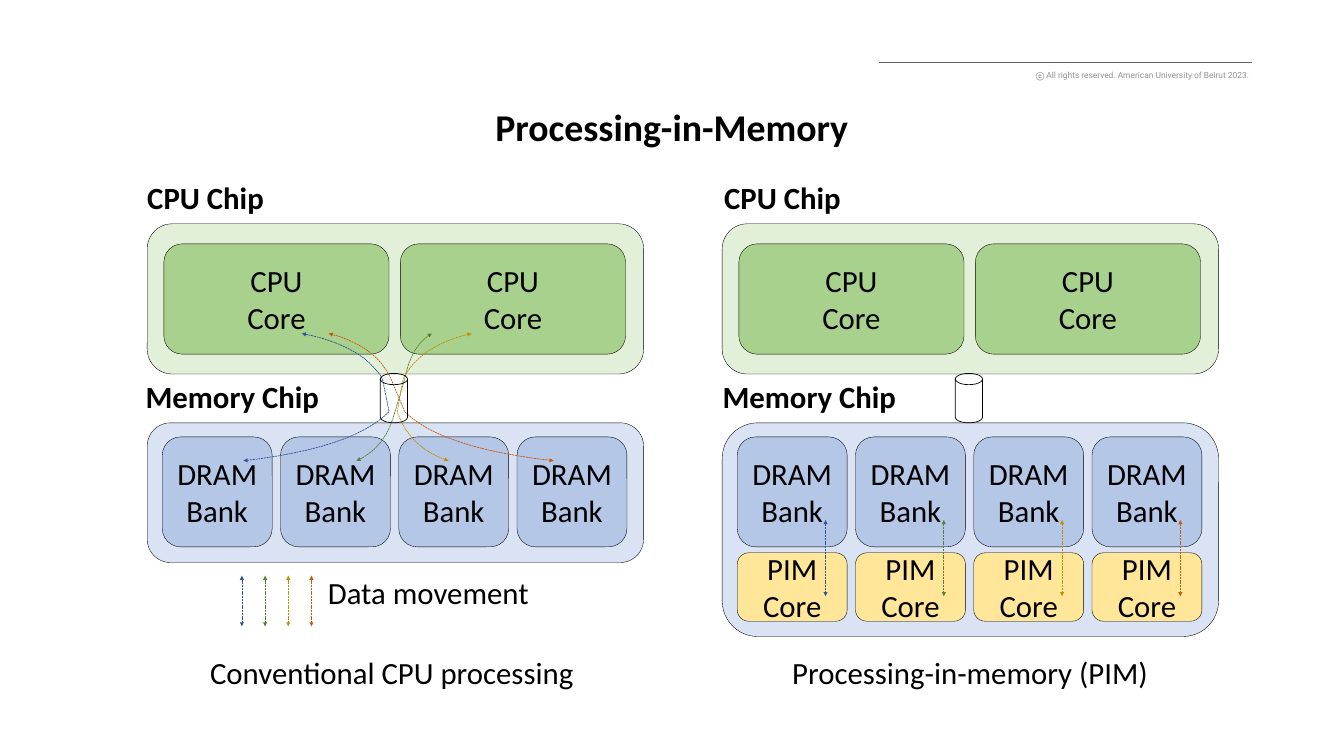
from lxml.etree import SubElement
from pptx import Presentation
from pptx.dml.color import RGBColor
from pptx.enum.dml import MSO_LINE
from pptx.enum.shapes import MSO_CONNECTOR, MSO_SHAPE
from pptx.enum.text import MSO_ANCHOR as Anchor, MSO_AUTO_SIZE as AutoSize, PP_ALIGN as Align
from pptx.oxml.ns import qn
from pptx.util import Cm, Pt

BLACK, GRAY = "000000", "929292"
BODY = {"name": "Calibri", "size": Pt(44), "bold": False}
HEADING = BODY | {"bold": True}
TITLE = HEADING | {"size": Pt(54)}
SMALL = {"name": "Roboto", "size": Pt(12), "bold": False}
SIDES = ("margin_left", "margin_top", "margin_right", "margin_bottom")

CONVENTIONAL_LEFT, PIM_LEFT = 7.42, 36.4
CHIP_WIDTH, CPU_TOP, CPU_HEIGHT = 25.02, 11.28, 7.57
CORE_INSET, CORE_STEP, CORE_WIDTH = 0.84, 11.92, 11.35
BANK_INSET, BANK_STEP, BANK_SIZE = 0.76, 5.96, 5.54
MEMORY_TOP, BANK_TOP = 21.31, 22.02
BUS_INSET, BUS_TOP, BUS_WIDTH = 11.75, 18.82, 1.37

FLOW_COLORS = ["2F5597", "548235", "BF9000", "C55A11"]
FLOW_BANK_Y, FLOW_BUS_LOW_Y, FLOW_BUS_HIGH_Y, FLOW_CORE_Y = 23.22, 20.75, 19.1, 16.81
FLOW_BANK_X = [12.27, 17.96, 22.61, 27.91]
FLOW_BUS_LOW_X = [19.61, 19.91, 20.02, 20.4]
FLOW_BUS_HIGH_X = [19.28, 20.4, 20.32, 19.71]
FLOW_CORE_X = [15.21, 21.77, 23.77, 16.56]
CURVE_STEPS = 12


def rgb(value):
    """Turn a hex string into a colour."""
    return RGBColor.from_string(value)


def set_all(target, values):
    """Set attributes from a dict of format values."""
    for name, value in values.items():
        setattr(target, name, value)


def add_run(paragraph, text, values, color=BLACK):
    """Add formatted text to a paragraph."""
    run = paragraph.add_run()
    run.text = text
    run.font.color.rgb = rgb(color)
    set_all(run.font, values)


def write(frame, lines, values):
    """Write one centred paragraph per line in a text frame."""
    for index, line in enumerate(lines):
        paragraph = frame.add_paragraph() if index else frame.paragraphs[0]
        paragraph.alignment = Align.CENTER
        add_run(paragraph, line, values)


def add_frame(slide, left, top, width, height):
    """Add an unwrapped text box that fits its text and return its frame."""
    frame = slide.shapes.add_textbox(Cm(left), Cm(top), Cm(width), Cm(height)).text_frame
    set_all(frame, {"word_wrap": False, "auto_size": AutoSize.SHAPE_TO_FIT_TEXT})
    return frame


def add_label(slide, left, top, width, text, values=BODY):
    """Add a centred line of text."""
    write(add_frame(slide, left, top, width, 2.13), [text], values)


def set_outline(shape, color, weight):
    """Set the colour and width of an outline."""
    shape.line.color.rgb = rgb(color)
    shape.line.width = Pt(weight)


def add_box(slide, left, top, width, height, fill=None, lines=(),
            kind=MSO_SHAPE.ROUNDED_RECTANGLE, weight=0.5):
    """Add an outlined shape with optional fill and text."""
    shape = slide.shapes.add_shape(kind, Cm(left), Cm(top), Cm(width), Cm(height))
    shape.shadow.inherit = False
    if fill:
        shape.fill.solid()
        shape.fill.fore_color.rgb = rgb(fill)
    else:
        shape.fill.background()
    set_outline(shape, BLACK, weight)
    set_all(shape.text_frame, dict.fromkeys(SIDES, 0))
    set_all(shape.text_frame, {"word_wrap": True, "vertical_anchor": Anchor.MIDDLE})
    write(shape.text_frame, lines, BODY)
    return shape


def add_row(slide, count, left, top, step, width, height, fill, lines):
    """Add equal boxes side by side."""
    for index in range(count):
        add_box(slide, left + index * step, top, width, height, fill, lines)


def add_line(slide, start, end, color, weight):
    """Add a straight line without shadow."""
    points = [Cm(value) for value in (*start, *end)]
    line = slide.shapes.add_connector(MSO_CONNECTOR.STRAIGHT, *points)
    set_outline(line, color, weight)
    SubElement(line.element.spPr, qn("a:effectLst"))
    return line


def make_flow(shape):
    """Dash an outline and put arrowheads on both ends."""
    shape.line.dash_style = MSO_LINE.SQUARE_DOT
    outline = shape.element.spPr.find(qn("a:ln"))
    for end in ("a:headEnd", "a:tailEnd"):
        SubElement(outline, qn(end), type="triangle")


def add_flow_lines(slide, left, top, bottom, step):
    """Add one vertical two-way arrow per flow colour."""
    for index, color in enumerate(FLOW_COLORS):
        x = left + index * step
        make_flow(add_line(slide, (x, top), (x, bottom), color, 1))


def bend(end, bus):
    """Return points that leave an end nearly level and turn steeply into the bus."""
    control = [a + share * (b - a) for a, b, share in zip(end, bus, (0.75, 0.25))]
    points = []
    for step in range(CURVE_STEPS + 1):
        t = step / CURVE_STEPS
        points.append(tuple(
            (1 - t) ** 2 * a + 2 * t * (1 - t) * c + t ** 2 * b
            for a, c, b in zip(end, control, bus)
        ))
    return points


def add_flow_curve(slide, bank, bus_low, bus_high, core, color):
    """Add a two-way arrow from a bank through the bus to a core."""
    path_points = bend(bank, bus_low) + bend(core, bus_high)[::-1]
    points = [(round(x * 100), round(y * 100)) for x, y in path_points]
    builder = slide.shapes.build_freeform(*points[0], scale=Cm(0.01))
    builder.add_line_segments(points[1:], close=False)
    shape = builder.convert_to_shape()
    shape.shadow.inherit = False
    shape.fill.background()
    set_outline(shape, color, 1)
    make_flow(shape)


def add_flow_curves(slide):
    """Add one winding arrow per flow colour."""
    columns = zip(FLOW_BANK_X, FLOW_BUS_LOW_X, FLOW_BUS_HIGH_X, FLOW_CORE_X)
    heights = (FLOW_BANK_Y, FLOW_BUS_LOW_Y, FLOW_BUS_HIGH_Y, FLOW_CORE_Y)
    for column, color in zip(columns, FLOW_COLORS):
        add_flow_curve(slide, *zip(column, heights), color)


def add_system(slide, left, label_left, memory_height):
    """Add a CPU chip above a memory chip, joined by a bus."""
    add_box(slide, left, CPU_TOP, CHIP_WIDTH, CPU_HEIGHT, "E2F0D9")
    add_row(slide, 2, left + CORE_INSET, 12.29, CORE_STEP, CORE_WIDTH, 5.56,
            "A9D18E", ["CPU", "Core"])
    add_box(slide, left, MEMORY_TOP, CHIP_WIDTH, memory_height, "DAE3F3")
    add_row(slide, 4, left + BANK_INSET, BANK_TOP, BANK_STEP, BANK_SIZE, BANK_SIZE,
            "B4C7E7", ["DRAM Bank"])
    add_label(slide, label_left, 8.86, 6.45, "CPU Chip", HEADING)
    add_label(slide, label_left - 0.1, 18.93, 9.35, "Memory Chip", HEADING)


def add_bus(slide, left):
    """Add the bus between the chips of a system."""
    bus = add_box(slide, left + BUS_INSET, BUS_TOP, BUS_WIDTH, MEMORY_TOP - BUS_TOP,
                  kind=MSO_SHAPE.CAN, weight=1)
    bus.adjustments[0] = 0.414


def add_header(slide):
    """Add the rule, the copyright line and the title."""
    add_line(slide, (44.32, 3.15), (63.09, 3.15), "666666", 2)
    frame = add_frame(slide, 51.84, 3.4, 11.28, 0.79)
    set_all(frame, dict.fromkeys(SIDES, Cm(0.15)))
    paragraph = frame.paragraphs[0]
    paragraph.alignment = Align.RIGHT
    add_run(paragraph, "ⓒ ", SMALL | {"bold": True}, GRAY)
    add_run(paragraph, "All rights reserved. American University of Beirut 2023.", SMALL, GRAY)

    title = add_frame(slide, 0.58, 5.28, 66.57, 2.51)
    set_all(title, {"word_wrap": True, "auto_size": AutoSize.NONE,
                    "vertical_anchor": Anchor.MIDDLE})
    write(title, ["Processing-in-Memory"], TITLE)
    title.paragraphs[0].line_spacing = 0.9


def main():
    """Build and save the slide."""
    presentation = Presentation()
    presentation.slide_width, presentation.slide_height = Cm(67.74), Cm(38.1)
    slide = presentation.slides.add_slide(presentation.slide_layouts[6])
    add_header(slide)

    add_system(slide, CONVENTIONAL_LEFT, 7.14, 7.04)
    add_flow_curves(slide)
    add_bus(slide, CONVENTIONAL_LEFT)
    add_flow_lines(slide, 12.19, 29.01, 31.57, 1.17)
    add_label(slide, 16.18, 28.78, 10.82, "Data movement")
    add_label(slide, 10.19, 32.82, 19.13, "Conventional CPU processing")

    add_system(slide, PIM_LEFT, 36.22, 10.77)
    add_bus(slide, PIM_LEFT)
    add_row(slide, 4, PIM_LEFT + BANK_INSET, 27.86, BANK_STEP, BANK_SIZE, 3.45,
            "FFE699", ["PIM Core"])
    add_flow_lines(slide, 41.61, 26.21, 30.05, BANK_STEP)
    add_label(slide, 39.57, 32.82, 18.67, "Processing-in-memory (PIM)")
    presentation.save("out.pptx")


if __name__ == "__main__":
    main()
